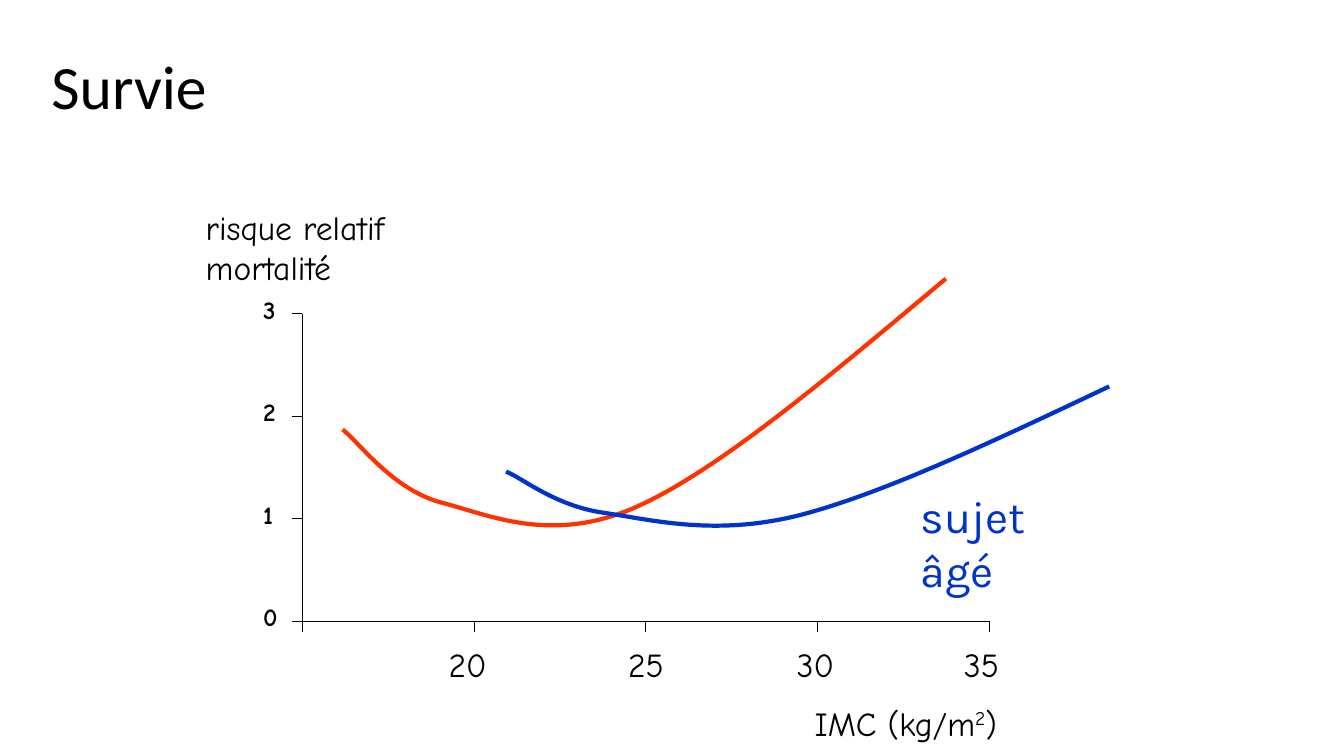
from dataclasses import dataclass

from lxml import etree
from pptx import Presentation
from pptx import util as u
from pptx.dml.color import RGBColor
from pptx.enum import shapes, text
from pptx.oxml.ns import qn

BLACK, RED, BLUE = "000000", "FF3300", "0033CC"
HAND = "Comic Neue"

# Plot grid: one column per 5 IMC units, one row per unit of relative risk
LEFT, BASE = 3.0, 6.165
COLUMN, ROW = 1.7025, 1.018
IMC_MIN, IMC_STEP, IMC_MAX, RISK_MAX = 15, 5, 35, 3
TICK = 0.1

Point = tuple[float, float]


@dataclass
class Span:
    words: str
    raised: bool = False


@dataclass
class Label:
    left: float
    top: float
    width: float
    height: float
    lines: list[list[Span]]
    size: float = 24
    font: str = HAND
    color: str = BLACK
    bold: bool = False
    inset: float = 0.05
    tabs: tuple[float, ...] = ()


@dataclass
class Curve:
    color: str
    depth: float  # height of the drawn curve
    points: list[Point]  # (IMC, risk): start, then two controls and an end per piece


CURVES = [
    Curve(RED, 2.46, [(16.17, 1.87), (16.64, 1.75), (17.61, 1.29), (19.02, 1.16),
                      (20.43, 1.04), (22.22, 0.75), (24.69, 1.11),
                      (27.13, 1.47), (30.42, 2.41), (33.74, 3.34)]),
    Curve(BLUE, 1.38, [(20.93, 1.46), (21.4, 1.4), (22.34, 1.13), (23.75, 1.06),
                       (25.19, 0.99), (26.98, 0.83), (29.42, 1.03),
                       (31.89, 1.24), (35.15, 1.76), (38.5, 2.29)]),
]

CAPTIONS = [
    Label(1.99, 2, 2.29, 1.02, [[Span("risque relatif")], [Span("mortalité")]]),
    Label(4.4, 6.34, 5.62, 0.56, [[Span("20\t25\t30\t35")]], tabs=(1.78, 3.45, 5.11)),
    Label(8.03, 6.92, 2.06, 0.56,
          [[Span("IMC (kg/m"), Span("2", raised=True), Span(")")]]),
    Label(9.08, 4.8, 1.92, 0.64, [[Span("sujet âgé")]], 32, "Karla", BLUE),
]


def rgb(color: str) -> RGBColor:
    return RGBColor.from_string(color)


def x_at(imc: float) -> float:
    return LEFT + (imc - IMC_MIN) / IMC_STEP * COLUMN


def y_at(risk: float) -> float:
    return BASE - risk * ROW


def set_insets(frame, inset: float) -> None:
    frame.margin_left = frame.margin_right = u.Inches(inset)
    frame.margin_top = frame.margin_bottom = u.Inches(inset)


def add_span(para, span: Span, size: float, font: str, color: str, bold: bool = False) -> None:
    run = para.add_run()
    run.text = span.words
    run.font.size, run.font.name, run.font.bold = u.Pt(size), font, bold
    run.font.color.rgb = rgb(color)
    if span.raised:
        run._r.get_or_add_rPr().set("baseline", "30000")


def set_tabs(para, stops: tuple[float, ...]) -> None:
    tab_list = etree.SubElement(para._p.get_or_add_pPr(), qn("a:tabLst"))
    for stop in stops:
        etree.SubElement(tab_list, qn("a:tab"), pos=str(u.Inches(stop)), algn="l")


def add_label(page, label: Label) -> None:
    box = page.shapes.add_textbox(*map(u.Inches, (label.left, label.top, label.width, label.height)))
    frame = box.text_frame
    frame.word_wrap = True
    set_insets(frame, label.inset)
    for index, spans in enumerate(label.lines):
        para = frame.add_paragraph() if index else frame.paragraphs[0]
        if label.tabs:
            set_tabs(para, label.tabs)
        for span in spans:
            add_span(para, span, label.size, label.font, label.color, label.bold)


def add_line(page, start: Point, end: Point) -> None:
    line = page.shapes.add_connector(
        shapes.MSO_CONNECTOR.STRAIGHT, *map(u.Inches, (*start, *end)))
    line.line.color.rgb = rgb(BLACK)
    line.line.width = u.Pt(0.75)
    etree.SubElement(line._element.spPr, qn("a:effectLst"))


def add_curve(page, curve: Curve) -> None:
    start, *rest = [(u.Inches(x_at(imc)), u.Inches(y_at(risk))) for imc, risk in curve.points]
    builder = page.shapes.build_freeform(*start)
    builder.add_line_segments(rest, close=False)
    shape = builder.convert_to_shape()
    # Join every three straight segments into one Bézier piece
    outline = next(shape._element.iter(qn("a:path")))
    segments = outline.findall(qn("a:lnTo"))
    for first in range(0, len(segments), 3):
        piece = etree.SubElement(outline, qn("a:cubicBezTo"))
        for segment in segments[first:first + 3]:
            piece.append(segment[0])
            outline.remove(segment)
    shape.height = u.Inches(curve.depth)
    outline.set("h", str(shape.height))
    shape.shadow.inherit = False
    shape.fill.background()
    shape.line.color.rgb = rgb(curve.color)
    shape.line.width = u.Pt(3)


def add_title(page, words: str) -> None:
    title = page.shapes.title
    title.left, title.top, title.width, title.height = map(u.Inches, (0.46, 0.26, 8.5, 1.25))
    frame = title.text_frame
    frame.vertical_anchor = text.MSO_ANCHOR.MIDDLE
    set_insets(frame, 0.05)
    para = frame.paragraphs[0]
    para.alignment = text.PP_ALIGN.LEFT
    para.line_spacing = 0.9
    add_span(para, Span(words), 44, "Calibri", BLACK)


def add_axes(page) -> None:
    # Vertical axis: relative risk
    add_line(page, (LEFT, y_at(RISK_MAX)), (LEFT, BASE))
    for risk in range(RISK_MAX + 1):
        y = y_at(risk)
        add_line(page, (LEFT - TICK, y), (LEFT, y))
        add_label(page, Label(2.61, y - 0.195, 0.17, 0.35, [[Span(str(risk))]],
                              size=18, bold=True, inset=0))
    # Horizontal axis: body mass index
    add_line(page, (LEFT, BASE), (x_at(IMC_MAX), BASE))
    for imc in range(IMC_MIN, IMC_MAX + 1, IMC_STEP):
        add_line(page, (x_at(imc), BASE + TICK), (x_at(imc), BASE))


def main() -> None:
    deck = Presentation()
    deck.slide_width, deck.slide_height = u.Inches(13.33), u.Inches(7.5)
    page = deck.slides.add_slide(deck.slide_layouts.get_by_name("Title Only"))
    add_title(page, "Survie")
    add_axes(page)
    for curve in CURVES:
        add_curve(page, curve)
    for caption in CAPTIONS:
        add_label(page, caption)
    deck.save("out.pptx")


if __name__ == "__main__":
    main()
